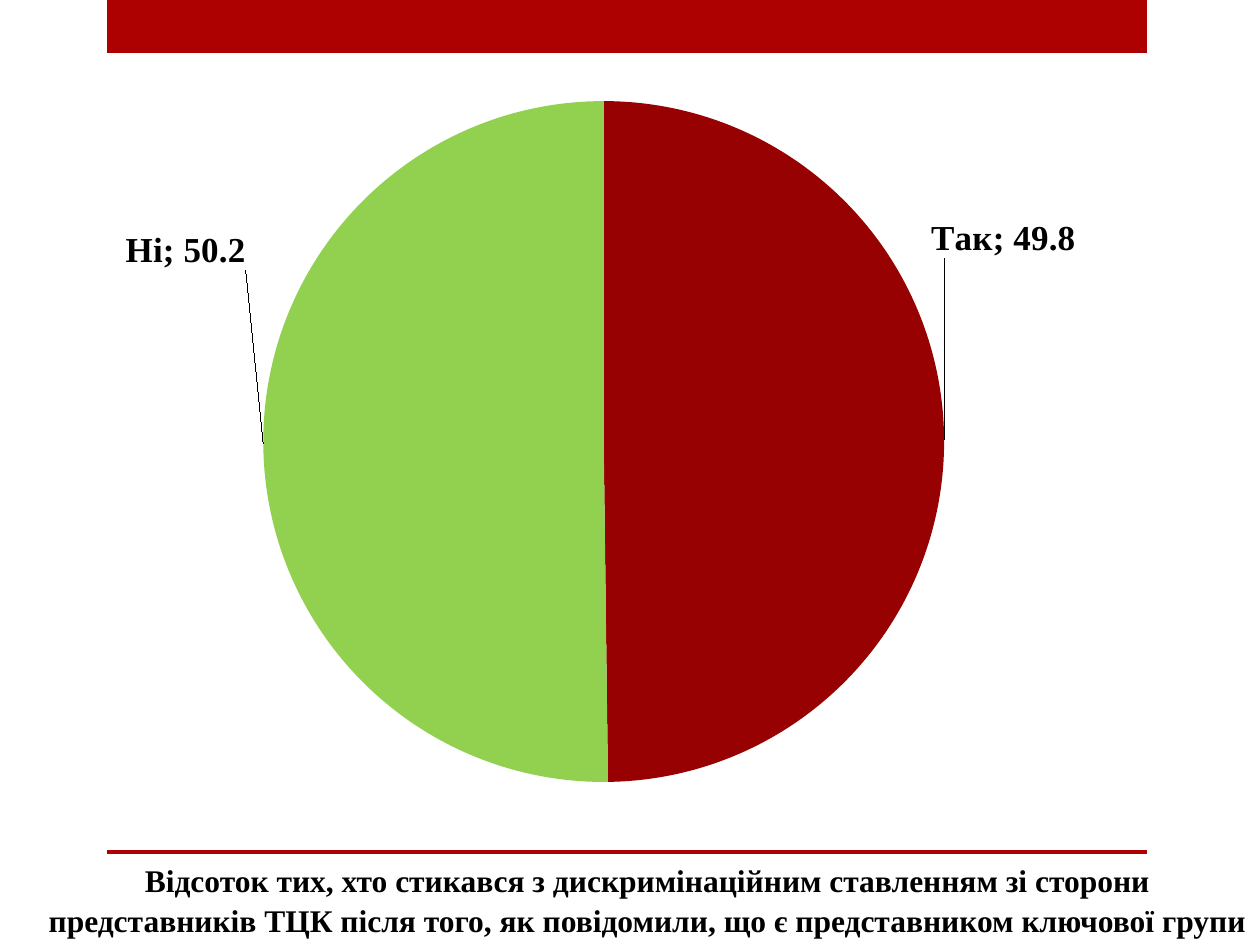
"""Build the slide with a pie chart of discriminatory treatment by TCC staff."""
import dataclasses

import lxml.etree
import pptx
import pptx.chart.data
import pptx.dml.color
import pptx.enum.chart
import pptx.enum.shapes
import pptx.enum.text
import pptx.oxml.ns
import pptx.util


@dataclasses.dataclass(frozen=True)
class Theme:
    """Colours, font and type sizes of the slide."""
    red: str = "AD0101"
    green: str = "92D050"
    ink: str = "000000"
    font: str = "Times New Roman"
    caption_size: int = 18
    label_size: int = 20


def px(length):
    """Turn pixels into EMU."""
    return pptx.util.Emu(round(length * 914400 / 126))


def rgb(colour):
    """Turn a hex string into a colour."""
    return pptx.dml.color.RGBColor.from_string(colour)


def format_font(font, *, name, size, colour, bold=True):
    """Apply a typeface, size, colour and weight."""
    font.name = name
    font.size = pptx.util.Pt(size)
    font.bold = bold
    font.color.rgb = rgb(colour)


def write(frame, text, *, align, anchor, line_spacing, **font_format):
    """Write one formatted paragraph into a text frame."""
    frame.word_wrap = True
    frame.auto_size = pptx.enum.text.MSO_AUTO_SIZE.NONE
    frame.vertical_anchor = anchor
    frame.text = text
    paragraph = frame.paragraphs[0]
    paragraph.alignment = align
    paragraph.line_spacing = line_spacing
    format_font(paragraph.runs[0].font, **font_format)


def manual_layout(**settings):
    """Make a chart layout element from its settings."""
    layout = lxml.etree.Element(pptx.oxml.ns.qn("c:layout"))
    manual = lxml.etree.SubElement(layout, pptx.oxml.ns.qn("c:manualLayout"))
    for setting, value in settings.items():
        lxml.etree.SubElement(manual, pptx.oxml.ns.qn(f"c:{setting}")).set("val", str(value))
    return layout


class Slide:
    """Holds the theme and the current slide."""

    def __init__(self, slide, theme):
        self.slide = slide
        self.theme = theme

    def band(self, left, top, width, height):
        """Add a plain red band."""
        band = self.slide.shapes.add_shape(
            pptx.enum.shapes.MSO_SHAPE.RECTANGLE, *map(px, (left, top, width, height)))
        band.shadow.inherit = False
        band.fill.solid()
        band.fill.fore_color.rgb = rgb(self.theme.red)
        band.line.fill.background()

    def caption(self, text, left, top, width, height):
        """Place the title as a caption."""
        title = self.slide.shapes.title
        title.left, title.top, title.width, title.height = map(px, (left, top, width, height))
        write(title.text_frame, text, align=pptx.enum.text.PP_ALIGN.CENTER,
              anchor=pptx.enum.text.MSO_ANCHOR.BOTTOM, line_spacing=1.05,
              name=self.theme.font, size=self.theme.caption_size, colour=self.theme.ink)

    def pie(self, answers, left, top, width, height):
        """Add a pie from rows of category, value, colour, brightness and label offset."""
        shares = pptx.chart.data.CategoryChartData(number_format="###0.0")
        shares.categories = [answer[0] for answer in answers]
        shares.add_series("Series 1", [answer[1] for answer in answers])
        chart = self.slide.shapes.add_chart(
            pptx.enum.chart.XL_CHART_TYPE.PIE, *map(px, (left, top, width, height)), shares).chart
        chart.has_legend = False
        chart.has_title = False
        label_font = dict(name=self.theme.font, size=self.theme.label_size, colour=self.theme.ink)
        format_font(chart.font, **label_font)
        plot = chart.plots[0]
        plot.vary_by_categories = True
        plot_area = chart.element.find(".//" + pptx.oxml.ns.qn("c:plotArea"))
        for layout in plot_area.findall(pptx.oxml.ns.qn("c:layout")):
            plot_area.remove(layout)
        plot_area.insert(0, manual_layout(
            layoutTarget="inner", xMode="edge", yMode="edge", x=0.155, y=0.024, w=0.667, h=0.951))

        series = plot.series[0]
        labels = series.data_labels
        labels.show_value = True
        labels.show_category_name = True
        labels.number_format = "###0.0"
        labels.number_format_is_linked = False
        labels.position = pptx.enum.chart.XL_LABEL_POSITION.OUTSIDE_END
        format_font(labels.font, **label_font)
        for index, (_, _, colour, brightness, offset) in enumerate(answers):
            point = series.points[index]
            point.format.fill.solid()
            point.format.fill.fore_color.rgb = rgb(colour)
            point.format.fill.fore_color.brightness = brightness
            point.format.line.fill.background()
            point.data_label.position = pptx.enum.chart.XL_LABEL_POSITION.OUTSIDE_END
            format_font(point.data_label.font, **label_font)
        for label, answer in zip(chart.element.iter(pptx.oxml.ns.qn("c:dLbl")), answers):
            x, y = answer[4]
            label.insert(1, manual_layout(x=x, y=y))
            label.find(pptx.oxml.ns.qn("c:showCatName")).set("val", "1")
            separator = lxml.etree.SubElement(label, pptx.oxml.ns.qn("c:separator"))
            separator.text = "; "


def main():
    """Build and save the presentation."""
    theme = Theme()
    presentation = pptx.Presentation()
    presentation.slide_width, presentation.slide_height = px(1260), px(945)
    slide = Slide(presentation.slides.add_slide(presentation.slide_layouts[5]), theme)
    for top, height in ((0, 53), (850, 4)):
        slide.band(107, top, 1040, height)
    slide.caption(
        "Відсоток тих, хто стикався з дискримінаційним ставленням зі сторони представників ТЦК "
        "після того, як повідомили, що є представником ключової групи", 35, 857, 1225, 88)
    slide.pie([("Так", 49.8, theme.red, -0.12, (-0.02, -0.28)),
               ("Ні", 50.2, theme.green, 0, (-0.01, -0.27))], 105, 84, 1021, 716)
    presentation.save("out.pptx")


if __name__ == "__main__":
    main()
